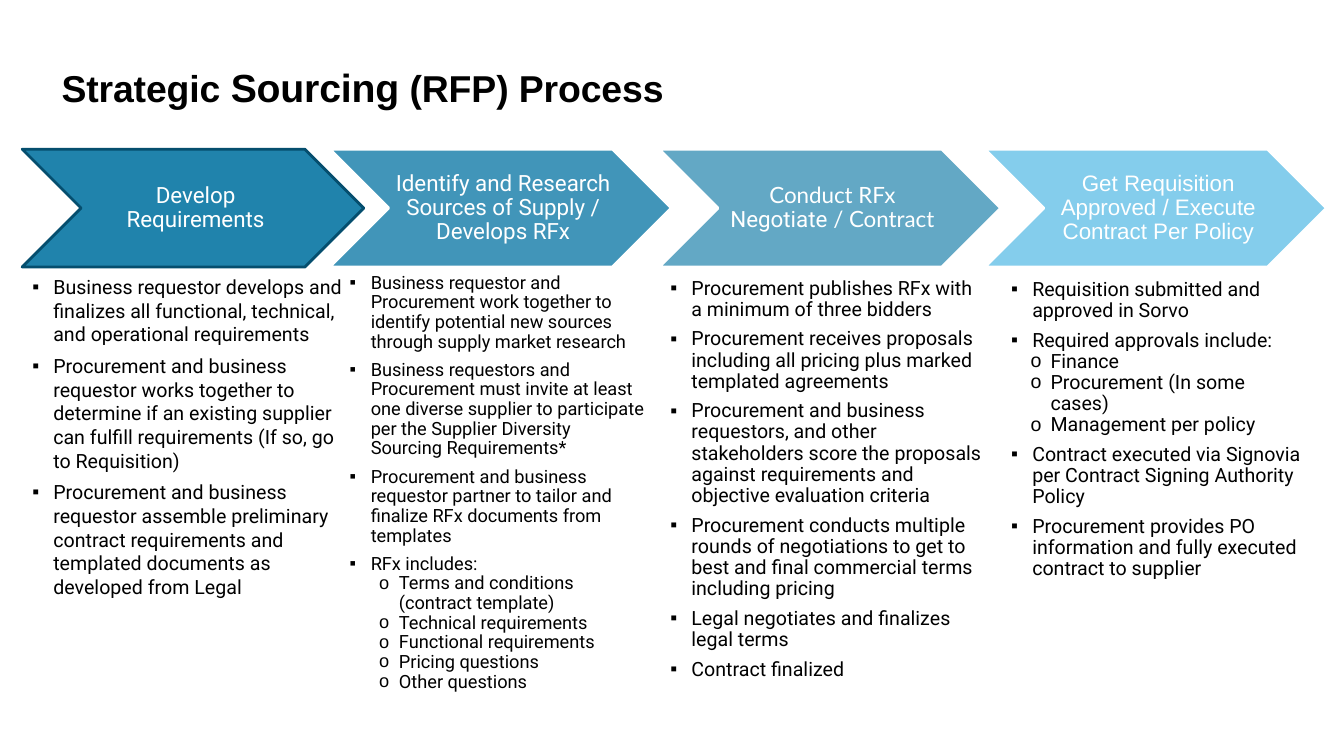
from lxml.etree import SubElement
from pptx import Presentation
from pptx.dml.color import RGBColor
from pptx.enum.shapes import MSO_SHAPE
from pptx.enum.text import MSO_ANCHOR, MSO_AUTO_SIZE, PP_ALIGN
from pptx.oxml.ns import qn
from pptx.util import Cm, Pt

BLACK = RGBColor(0x00, 0x00, 0x00)
WHITE = RGBColor(0xFF, 0xFF, 0xFF)
BLUE = RGBColor(0x08, 0x76, 0xA4)
SKY = RGBColor(0x0B, 0x9D, 0xDB)
NAVY = RGBColor(0x05, 0x4E, 0x6E)

# Title runs: text, size
TITLE = [("Strategic ", 26.7), ("Sourcing", 28), (" (RFP) Process", 26.7)]

# Steps: left, fill, opacity in percent, line, runs of text and font
STEPS = [
    (0.56, BLUE, 90, NAVY, [("Develop Requirements", "Roboto")]),
    (8.31, BLUE, 77, WHITE,
     [("Identify and Research Sources of Supply / Develops RFx", "Roboto")]),
    (16.61, BLUE, 63, WHITE,
     [("Conduct RFx ", "Lato"), ("Negotiate", "Roboto"),
      (" / Contract", "Lato")]),
    (24.82, SKY, 50, WHITE,
     [("Get Requisition Approved / Execute Contract Per Policy", "Arial")]),
]

# Lists: box, size, line spacing, sub-item indent, items (inner list = sub-items)
LISTS = [
    ((0.43, 6.81, 8.46, 10.06), 14, 1.0, 1.37, [
        "Business requestor develops and finalizes all functional, "
        "technical, and operational requirements",
        "Procurement and business requestor works together to determine if "
        "an existing supplier can fulfill requirements (If so, go to "
        "Requisition)",
        "Procurement and business requestor assemble preliminary contract "
        "requirements and templated documents as developed from Legal",
    ]),
    ((8.43, 6.76, 8.05, 11.86), 13, 0.9, 1.37, [
        "Business requestor and Procurement work together to identify "
        "potential new sources through supply market research",
        "Business requestors and Procurement must invite at least one "
        "diverse supplier to participate per the Supplier Diversity "
        "Sourcing Requirements*",
        "Procurement and business requestor partner to tailor and finalize "
        "RFx documents from templates",
        "RFx includes:",
        ["Terms and conditions (contract template)",
         "Technical requirements", "Functional requirements",
         "Pricing questions", "Other questions"],
    ]),
    ((16.51, 6.88, 8.56, 5.92), 14, 0.9, 1.37, [
        "Procurement publishes RFx with a minimum of three bidders",
        "Procurement receives proposals including all pricing plus marked "
        "templated agreements",
        "Procurement and business requestors, and other stakeholders score "
        "the proposals against requirements and objective evaluation "
        "criteria",
        "Procurement conducts multiple rounds of negotiations to get to "
        "best and final commercial terms including pricing",
        "Legal negotiates and finalizes legal terms",
        "Contract finalized",
    ]),
    ((25.1, 6.91, 8.05, 5.92), 14, 0.9, 1.12, [
        "Requisition submitted and approved in Sorvo",
        "Required approvals include:",
        ["Finance", "Procurement (In some cases)", "Management per policy"],
        "Contract executed via Signovia per Contract Signing Authority "
        "Policy",
        "Procurement provides PO information and fully executed contract "
        "to supplier",
    ]),
]


class Deck:
    """Holds the style and the current slide."""

    font = "Roboto"
    gap = Pt(6)

    def __init__(self):
        self.prs = Presentation()
        self.prs.slide_width = Cm(33.87)
        self.prs.slide_height = Cm(19.05)
        # Comparison layout: a title and four body placeholders
        self.slide = self.prs.slides.add_slide(self.prs.slide_layouts[4])

    def place(self, shape, box):
        shape.left, shape.top, shape.width, shape.height = map(Cm, box)
        frame = shape.text_frame
        frame.word_wrap = True
        frame.auto_size = MSO_AUTO_SIZE.NONE
        frame.vertical_anchor = MSO_ANCHOR.TOP
        return frame

    def text(self, para, words, font, size, color, bold=False):
        run = para.add_run()
        run.text = words
        run.font.name = font
        run.font.size = Pt(size)
        run.font.color.rgb = color
        run.font.bold = bold
        return run

    def title(self, runs, box):
        frame = self.place(self.slide.shapes.title, box)
        frame.margin_left = frame.margin_right = 0
        frame.margin_top = frame.margin_bottom = 0
        para = frame.paragraphs[0]
        para.alignment = PP_ALIGN.LEFT
        para.line_spacing = 1.0
        para.space_before = 0
        para._p.get_or_add_pPr().set("marL", str(Cm(0.05)))
        for words, size in runs:
            run = self.text(para, words, "Arial", size, BLACK, True)
            run.font._element.set("spc", "-10")

    def step(self, left, fill, alpha, line, runs):
        shape = self.slide.shapes.add_shape(
            MSO_SHAPE.CHEVRON, Cm(left), Cm(3.76), Cm(8.61), Cm(2.97))
        shape.shadow.inherit = False
        shape.fill.solid()
        shape.fill.fore_color.rgb = fill
        tint = shape._element.spPr.find(qn("a:solidFill"))[0]
        SubElement(tint, qn("a:alpha"), val=str(alpha * 1000))
        shape.line.color.rgb = line
        shape.line.width = Pt(2)
        frame = shape.text_frame
        frame.word_wrap = True
        frame.vertical_anchor = MSO_ANCHOR.MIDDLE
        frame.margin_left = Cm(0.18)
        frame.margin_right = frame.margin_top = frame.margin_bottom = Cm(0.05)
        para = frame.paragraphs[0]
        para.alignment = PP_ALIGN.CENTER
        para.line_spacing = 0.9
        for words, font in runs:
            self.text(para, words, font, 16, WHITE)

    def bullet(self, para, mark, left, hang):
        props = para._p.get_or_add_pPr()
        props.set("marL", str(Cm(left)))
        props.set("indent", str(-Cm(hang)))
        SubElement(props, qn("a:buFont"), typeface="Arial")
        SubElement(props, qn("a:buChar"), char=mark)

    def points(self, shape, box, size, pitch, inset, items):
        frame = self.place(shape, box)
        rows = []
        for item in items:
            if isinstance(item, list):
                # Sub-items stay close to their heading
                rows[-1][2] = 0
                rows += [[words, 1, 0] for words in item]
                rows[-1][2] = self.gap
            else:
                rows.append([item, 0, self.gap])
        for num, (words, level, after) in enumerate(rows):
            para = frame.add_paragraph() if num else frame.paragraphs[0]
            para.level = level
            para.alignment = PP_ALIGN.LEFT
            para.line_spacing = pitch
            para.space_before = 0
            para.space_after = after
            if level:
                self.bullet(para, "o", inset, 0.5)
            else:
                self.bullet(para, "▪", 0.66, 0.53)
            self.text(para, words, self.font, size, BLACK)


def main():
    deck = Deck()
    # Title
    deck.title(TITLE, (1.5, 1.6, 30.43, 1.19))
    # Row of steps
    for step in STEPS:
        deck.step(*step)
    # One list under each step
    for idx, column in enumerate(LISTS, 1):
        deck.points(deck.slide.placeholders[idx], *column)
    # Save
    deck.prs.save("out.pptx")


if __name__ == "__main__":
    main()
